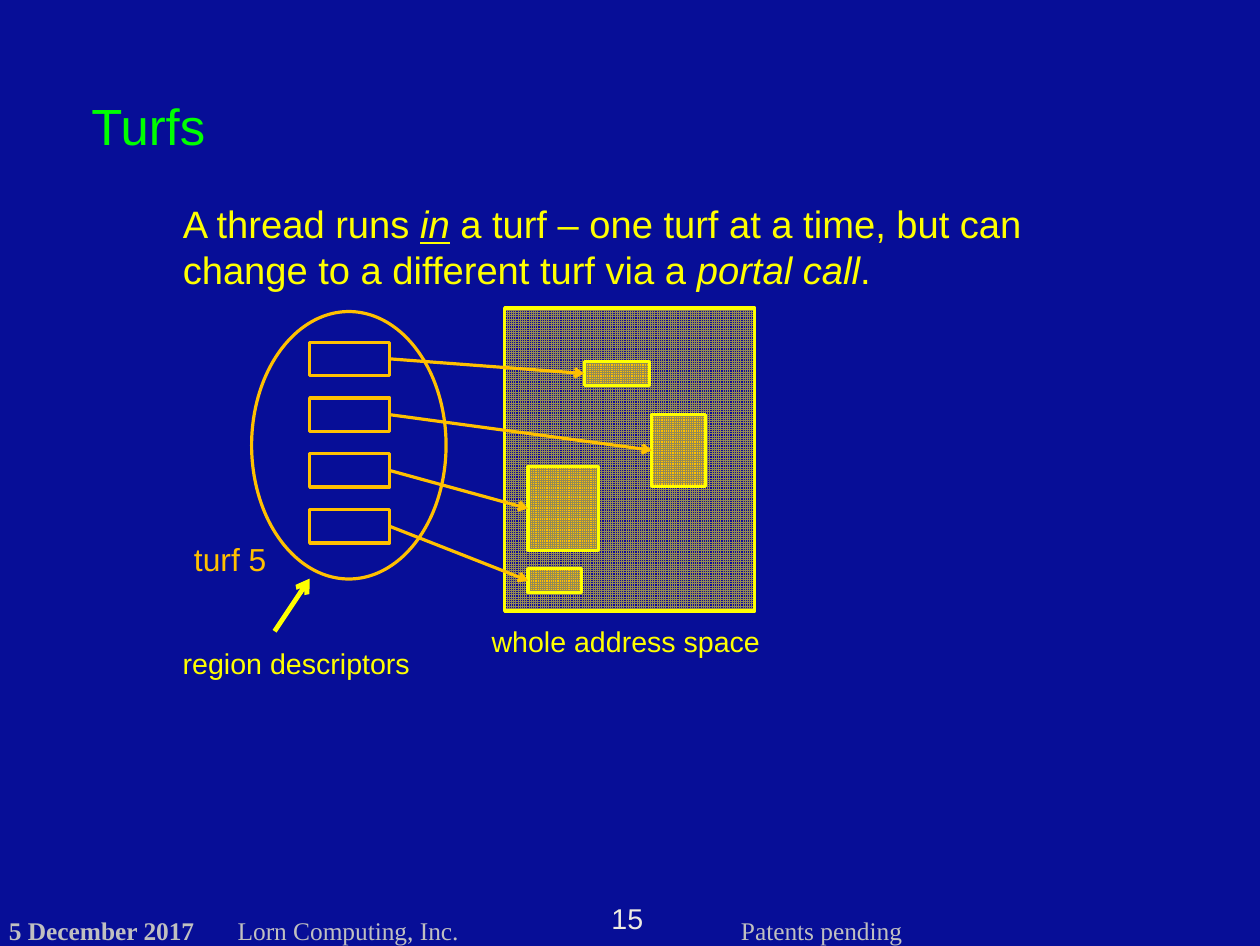
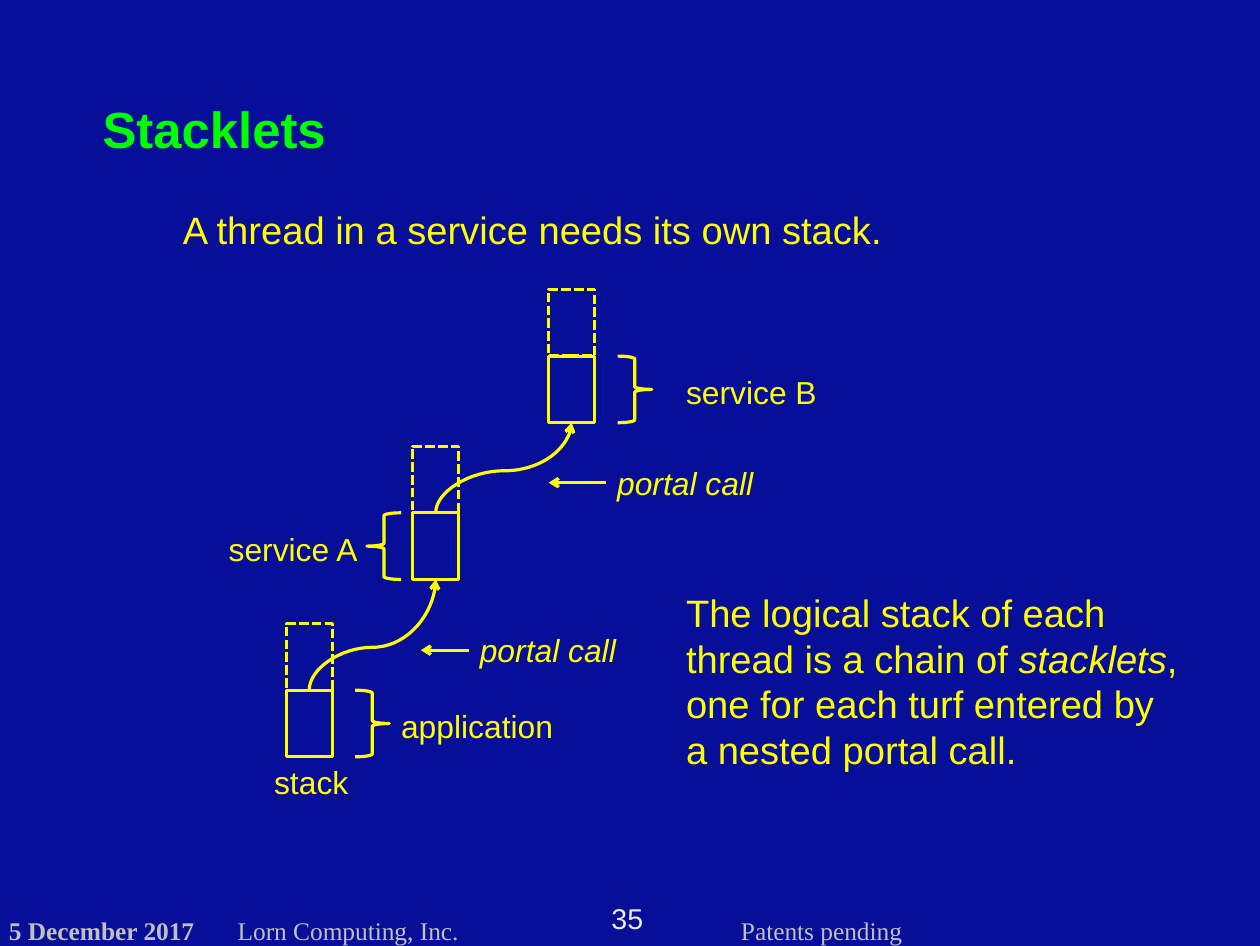
from lxml.etree import SubElement
from pptx import Presentation
from pptx.dml.color import RGBColor
from pptx.enum.dml import MSO_LINE, MSO_PATTERN
from pptx.enum.shapes import MSO_CONNECTOR, MSO_SHAPE
from pptx.enum.text import MSO_ANCHOR, MSO_AUTO_SIZE, PP_ALIGN
from pptx.oxml.ns import qn
from pptx.util import Cm, Pt

NAVY, YELLOW, AMBER, GREEN = "070E97", "FFFF00", "FFC000", "00FF00"
SILVER, IVORY, KHAKI, INDIGO = "C0C0C0", "EEECE1", "948A54", "0E0797"
INSETS = (0.25, 0.13, 0.25, 0.13)
FLUSH = (0, 0, 0, 0)
TOP, LEFT, BOTTOM, RIGHT = range(4)

FOOTERS = [
    ("5 December 2017", 0.2, 4.1, True),
    ("Lorn Computing, Inc.", 5.28, 4.85, False),
    ("Patents pending", 16.46, 3.63, False),
]

TURF_TEXT = [
    ("A thread runs ", ""),
    ("in", "iu"),
    (" a turf – one turf at a time, but can change to a different turf via a ", ""),
    ("portal call", "i"),
    (".", ""),
]
ADDRESS_SPACE = (11.21, 6.84, 5.56, 6.73)
TURF_OVAL = (5.59, 6.92, 4.32, 5.94)
DESCRIPTOR, DESCRIPTOR_PITCH = (6.88, 7.6, 1.78, 0.74), 1.24
REGIONS = [
    (12.98, 8.03, 1.45, 0.53),
    (14.48, 9.2, 1.19, 1.6),
    (11.73, 10.37, 1.57, 1.85),
    (11.73, 12.63, 1.19, 0.53),
]
TURF_LABELS = [
    ("turf 5", (4.06, 11.86, 2.13, 1.12), 20, AMBER),
    ("whole address space", (10.67, 13.72, 6.53, 1.02), 18, YELLOW),
    ("region descriptors", (3.81, 14.22, 5.61, 1.02), 18, YELLOW),
]

STACK_W, STACK_H, BRACE_W = 1.02, 1.48, 0.76
STACKLETS = [
    ("application", 6.36, 15.33, RIGHT, 8.66, 3.91),
    ("service A", 9.17, 11.39, LEFT, 4.83, 3.4),
    ("service B", 12.19, 7.91, RIGHT, 14.99, 3.45),
]
CURVE_BENDS = [38700, 46600]
PORTAL_CALLS = [(10.41, 13.88, 9.35), (13.46, 10.16, 12.19)]
CHAIN_TEXT = [
    ("The logical stack of each thread is a chain of ", ""),
    ("stacklets", "i"),
    (", one for each turf entered by a nested portal call.", ""),
]


def rgb(value):
    return RGBColor.from_string(value)


def place(sp, box):
    sp.left, sp.top, sp.width, sp.height = (Cm(v) for v in box)


def write(sp, text, size=20, color=YELLOW, font="Arial", bold=False,
          align=PP_ALIGN.LEFT, insets=INSETS, wrap=False):
    tf = sp.text_frame
    tf.auto_size = MSO_AUTO_SIZE.NONE
    tf.word_wrap = wrap
    tf.vertical_anchor = MSO_ANCHOR.TOP
    tf.margin_left, tf.margin_top, tf.margin_right, tf.margin_bottom = (
        Cm(v) for v in insets)
    p = tf.paragraphs[0]
    p.alignment = align
    p.space_before = Pt(0)
    for part, style in [(text, "")] if isinstance(text, str) else text:
        r = p.add_run()
        r.text = part
        r.font.name, r.font.size, r.font.bold = font, Pt(size), bold
        r.font.italic, r.font.underline = "i" in style, "u" in style
        r.font.color.rgb = rgb(color)
    return sp


def label(s, text, box, **style):
    return write(s.shapes.add_textbox(*(Cm(v) for v in box)), text, **style)


def outline(s, kind, box, color=YELLOW, width=2, dash=None, pattern=None):
    sp = s.shapes.add_shape(kind, *(Cm(v) for v in box))
    sp.shadow.inherit = False
    if pattern:
        sp.fill.patterned()
        sp.fill.pattern = MSO_PATTERN.SMALL_GRID
        sp.fill.fore_color.rgb = rgb(KHAKI)
        sp.fill.back_color.rgb = rgb(pattern)
    else:
        sp.fill.background()
    sp.line.color.rgb = rgb(color)
    sp.line.width = Pt(width)
    if dash:
        sp.line.dash_style = dash
    return sp


def arrow(s, start=(0, 0), end=(0, 0), color=YELLOW, width=2,
          kind=MSO_CONNECTOR.STRAIGHT):
    c = s.shapes.add_connector(kind, *(Cm(v) for v in (*start, *end)))
    c.line.color.rgb = rgb(color)
    c.line.width = Pt(width)
    SubElement(c.element.spPr.find(qn("a:ln")), qn("a:tailEnd"), type="arrow")
    SubElement(c.element.spPr, qn("a:effectLst"))
    return c


def link(c, source, source_side, target, target_side):
    c.begin_connect(source, source_side)
    c.end_connect(target, target_side)
    return c


def rise(s, source, target, bend):
    c = link(arrow(s, kind=MSO_CONNECTOR.CURVE), source, TOP, target, BOTTOM)
    run, climb = c.width, c.height
    shift = (run - climb) // 2
    c.left, c.top, c.width, c.height = c.left + shift, c.top - shift, climb, run
    xfrm = c.element.spPr.find(qn("a:xfrm"))
    for name, value in (("rot", "5400000"), ("flipH", "1"), ("flipV", "1")):
        xfrm.set(name, value)
    guides = c.element.spPr.find(qn("a:prstGeom")).find(qn("a:avLst"))
    SubElement(guides, qn("a:gd"), name="adj1", fmla=f"val {bend}")


def add_slide(prs, number, title, body, body_top, bold=False, insets=INSETS):
    s = prs.slides.add_slide(prs.slide_layouts[1])
    heading, content = s.placeholders
    place(heading, (2.03, 2.03, 23.5, 1.55))
    write(heading, title, size=32, color=GREEN, bold=bold, insets=insets, wrap=True)
    place(content, (3.81, body_top, 21.95, 2.31))
    pPr = content.text_frame.paragraphs[0]._p.get_or_add_pPr()
    pPr.set("marL", "0")
    pPr.set("indent", "0")
    SubElement(pPr, qn("a:buNone"))
    write(content, body, size=24, wrap=True)
    label(s, str(number), (13.54, 20, 0.79, 0.73), size=18, color=IVORY,
          align=PP_ALIGN.CENTER, insets=FLUSH)
    return s


def share_footers(prs, s):
    layout = prs.slide_layouts[1]
    for i, (text, x, w, bold) in enumerate(FOOTERS):
        sp = label(s, text, (x, 20.33, w, 0.65), size=16, color=SILVER,
                   font="Times New Roman", bold=bold, insets=FLUSH)
        sp.element.nvSpPr.cNvPr.set("id", str(20 + i))
        layout.shapes.element.append(sp.element)


def draw_turfs(s):
    outline(s, MSO_SHAPE.RECTANGLE, ADDRESS_SPACE, pattern=INDIGO)
    outline(s, MSO_SHAPE.OVAL, TURF_OVAL, color=AMBER)
    x, y, w, h = DESCRIPTOR
    for i, box in enumerate(REGIONS):
        descriptor = outline(s, MSO_SHAPE.RECTANGLE,
                             (x, y + i * DESCRIPTOR_PITCH, w, h), color=AMBER)
        region = outline(s, MSO_SHAPE.RECTANGLE, box, pattern=AMBER)
        link(arrow(s, color=AMBER), descriptor, RIGHT, region, LEFT)
    for text, box, size, color in TURF_LABELS:
        label(s, text, box, size=size, color=color)
    arrow(s, (6.1, 14.02), (6.88, 12.85), width=3)


def draw_stacklets(s):
    stacks = []
    for name, x, y, side, label_x, label_w in STACKLETS:
        stacks.append(outline(s, MSO_SHAPE.RECTANGLE, (x, y, STACK_W, STACK_H)))
        outline(s, MSO_SHAPE.RECTANGLE, (x, y - STACK_H, STACK_W, STACK_H),
                dash=MSO_LINE.SQUARE_DOT)
        if side == RIGHT:
            brace, brace_x = MSO_SHAPE.RIGHT_BRACE, x + STACK_W + 0.51
        else:
            brace, brace_x = MSO_SHAPE.LEFT_BRACE, x - BRACE_W - 0.26
        outline(s, brace, (brace_x, y, BRACE_W, STACK_H))
        label(s, name, (label_x, y + 0.24, label_w, 1.12))
    for source, target, bend in zip(stacks, stacks[1:], CURVE_BENDS):
        rise(s, source, target, bend)
    for x, y, tip in PORTAL_CALLS:
        label(s, [("portal call", "i")], (x, y, 3.56, 1.12))
        arrow(s, (x, y + 0.56), (tip, y + 0.56))
    label(s, "stack", (5.84, 16.81, 2.18, 1.12))
    label(s, CHAIN_TEXT, (14.99, 12.96, 11.51, 4.37), size=24, wrap=True)


def main():
    prs = Presentation()
    prs.slide_width, prs.slide_height = Cm(27.99), Cm(21.01)
    fill = prs.slide_master.background.fill
    fill.solid()
    fill.fore_color.rgb = rgb(NAVY)
    turfs = add_slide(prs, 15, "Turfs", TURF_TEXT, 4.32, insets=(0, 0.08, 0, 0))
    share_footers(prs, turfs)
    draw_turfs(turfs)
    stacklets = add_slide(prs, 35, "Stacklets",
                          "A thread in a service needs its own stack.", 4.45, bold=True)
    draw_stacklets(stacklets)
    prs.save("out.pptx")


if __name__ == "__main__":
    main()
